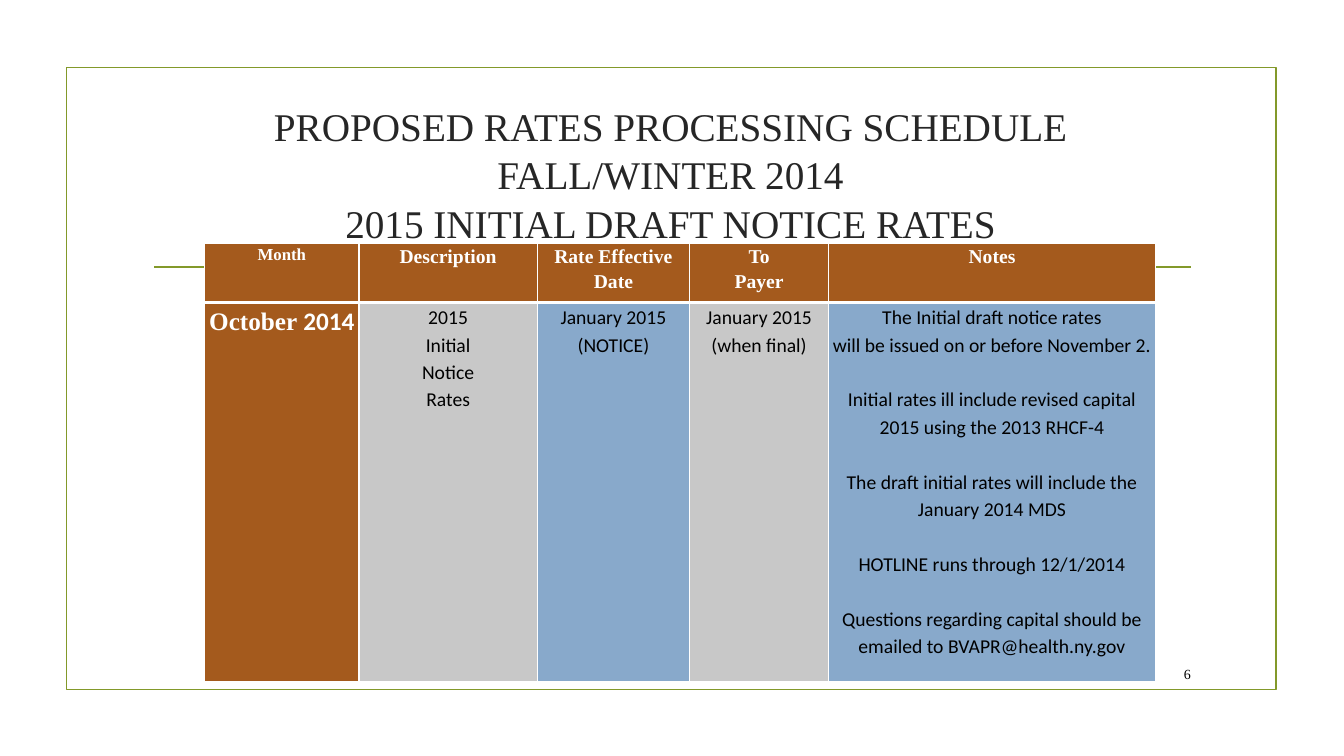
from lxml import etree
from pptx import Presentation
from pptx.dml.color import RGBColor
from pptx.enum.shapes import MSO_CONNECTOR, MSO_SHAPE
from pptx.enum.text import MSO_ANCHOR, MSO_AUTO_SIZE, PP_ALIGN
from pptx.oxml.ns import qn
from pptx.util import Inches, Pt

RECTANGLE = MSO_SHAPE.RECTANGLE
STRAIGHT = MSO_CONNECTOR.STRAIGHT
MIDDLE, TOP = MSO_ANCHOR.MIDDLE, MSO_ANCHOR.TOP
CENTER, RIGHT = PP_ALIGN.CENTER, PP_ALIGN.RIGHT
NO_AUTOFIT = MSO_AUTO_SIZE.NONE

COLORS = {
    "white": "FFFFFF", "black": "000000", "title": "262626", "olive": "83992A",
    "rust": "A45A1D", "gray": "C8C8C8", "blue": "88A9CB",
}
SERIF, SANS = "Times New Roman", "Calibri"
BLANK_LINE = 19.6

COLUMN_WIDTHS = [1.53, 1.77, 1.51, 1.38, 3.24]
ROW_HEIGHTS = [0.59, 3.76]
HEADERS = [["Month"], ["Description"], ["Rate Effective Date"], ["To", "Payer"], ["Notes"]]
DETAILS = [
    ["2015", "Initial", "Notice", "Rates"],
    ["January 2015", "(NOTICE)"],
    ["January 2015", "(when final)"],
    ["The Initial draft notice rates",
     "will be issued on or before November 2.",
     "Initial rates ill include revised capital 2015 using the 2013 RHCF-4",
     "The draft initial rates will include the January 2014 MDS",
     "HOTLINE runs through 12/1/2014",
     "Questions regarding capital should be emailed to BVAPR@health.ny.gov"],
]
SPACED_NOTES_FROM = 2


def rgb(name):
    return RGBColor.from_string(COLORS[name])


def add_span(para, text, size=14, font=SERIF, color="black", bold=False):
    span = para.add_run()
    span.text = text
    span.font.size = Pt(size)
    span.font.name = font
    span.font.bold = bold
    span.font.color.rgb = rgb(color)


def write(frame, lines, align=CENTER, spacing=1.0, gap_from=None, **style):
    """Write one paragraph per line; lines from index gap_from get a blank line's space before."""
    for index, line in enumerate(lines):
        para = frame.paragraphs[0] if index == 0 else frame.add_paragraph()
        para.alignment = align
        para.line_spacing = spacing
        para.space_before = Pt(BLANK_LINE if gap_from and index >= gap_from else 0)
        for part_index, part in enumerate(line.split("\v")):
            if part_index:
                para.add_line_break()
            add_span(para, part, **style)


def set_border(cell, side, width, color="white"):
    properties = cell._tc.get_or_add_tcPr()
    line = etree.Element(qn(f"a:ln{side}"), w=str(Pt(width)))
    fill = etree.SubElement(line, qn("a:solidFill"))
    etree.SubElement(fill, qn("a:srgbClr"), val=COLORS[color])
    properties.append(line)


class Page:
    def __init__(self, deck):
        self.slide = deck.slides.add_slide(deck.slide_layouts[5])
        self.line_color = "olive"
        self.line_width = 1.25

    def style_line(self, line):
        line.color.rgb = rgb(self.line_color)
        line.width = Pt(self.line_width)

    def frame(self, left, top, width, height):
        box = self.slide.shapes.add_shape(
            RECTANGLE, Inches(left), Inches(top), Inches(width), Inches(height))
        box.shadow.inherit = False
        box.fill.background()
        self.style_line(box.line)

    def rule(self, left, right, top):
        rule = self.slide.shapes.add_connector(
            STRAIGHT, Inches(left), Inches(top), Inches(right), Inches(top))
        self.style_line(rule.line)
        etree.SubElement(rule._element.spPr, qn("a:effectLst"))

    def title(self, text, left, top, width, height):
        title = self.slide.shapes.title
        title.left, title.top = Inches(left), Inches(top)
        title.width, title.height = Inches(width), Inches(height)
        frame = title.text_frame
        frame.auto_size = NO_AUTOFIT
        frame.word_wrap = True
        frame.vertical_anchor = MIDDLE
        write(frame, [text], spacing=1.04, size=28, color="title")

    def text(self, text, left, top, width, height, **style):
        box = self.slide.shapes.add_textbox(
            Inches(left), Inches(top), Inches(width), Inches(height))
        frame = box.text_frame
        frame.word_wrap = True
        frame.vertical_anchor = MIDDLE
        write(frame, [text], **style)

    def table(self, left, top, widths, heights):
        table = self.slide.shapes.add_table(
            len(heights), len(widths), Inches(left), Inches(top),
            Inches(sum(widths)), Inches(sum(heights))).table
        for column, width in zip(table.columns, widths):
            column.width = Inches(width)
        for row, height in zip(table.rows, heights):
            row.height = Inches(height)
        return table

    def cell(self, cell, fill, top_border=1, bottom_border=1):
        cell.margin_left = cell.margin_right = cell.margin_top = cell.margin_bottom = 0
        cell.vertical_anchor = TOP
        for side, width in zip("LRTB", (1, 1, top_border, bottom_border)):
            set_border(cell, side, width)
        cell.fill.solid()
        cell.fill.fore_color.rgb = rgb(fill)
        return cell.text_frame


def fill_schedule(page, table):
    for column, lines in enumerate(HEADERS):
        frame = page.cell(table.cell(0, column), "rust", bottom_border=3)
        write(frame, lines, spacing=1.15, size=14 if column else 12, color="white", bold=True)

    month = page.cell(table.cell(1, 0), "rust", top_border=3)
    month_style = {"size": 18, "color": "white", "bold": True}
    write(month, ["October "], spacing=1.15, **month_style)
    add_span(month.paragraphs[0], "2014", font=SANS, **month_style)

    for column, lines in enumerate(DETAILS, start=1):
        frame = page.cell(table.cell(1, column), "gray" if column % 2 else "blue", top_border=3)
        write(frame, lines, spacing=1.15, gap_from=SPACED_NOTES_FROM if column == 4 else None,
              font=SANS)


def main():
    deck = Presentation()
    deck.slide_width, deck.slide_height = Inches(13.33), Inches(7.5)
    page = Page(deck)
    page.frame(0.66, 0.67, 12, 6.17)
    page.rule(1.53, 11.81, 2.65)
    page.title("PROPOSED RATES PROCESSING SCHEDULE FALL/WINTER 2014\v"
               "2015 INITIAL DRAFT NOTICE RATES", 1.4, 0.88, 10.5, 1.68)
    fill_schedule(page, page.table(2.03, 2.41, COLUMN_WIDTHS, ROW_HEIGHTS))
    page.text("6", 11.32, 6.53, 0.59, 0.31, align=RIGHT, size=10)
    deck.save("out.pptx")


if __name__ == "__main__":
    main()
